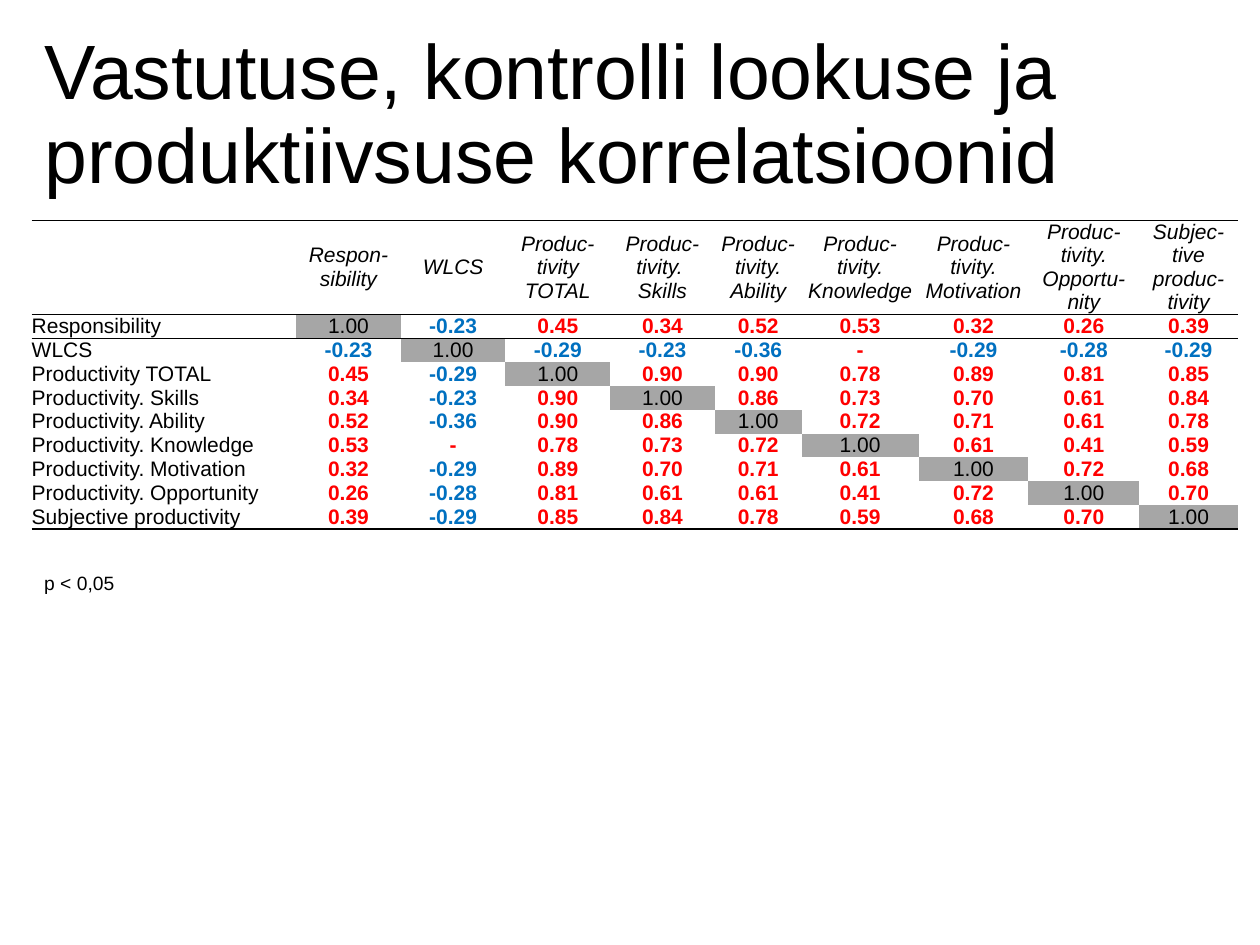
from lxml import etree
from pptx import Presentation
from pptx.dml.color import RGBColor
from pptx.enum.text import MSO_ANCHOR, MSO_AUTO_SIZE, PP_ALIGN
from pptx.oxml.ns import qn
from pptx.util import Cm, Pt

BLACK = RGBColor(0x00, 0x00, 0x00)
RED = RGBColor(0xFF, 0x00, 0x00)
BLUE = RGBColor(0x00, 0x70, 0xC0)
GREY = RGBColor(0xA6, 0xA6, 0xA6)
FONT = "Arial"
NO_STYLE = "{2D5ABB26-0587-4C30-8999-92F81FD0307C}"

MARGIN, WIDTH = 0.64, 24.3
COLUMN_WIDTHS = [5.33, 2.11, 2.11, 2.11, 2.11, 1.75, 2.36, 2.21, 2.24, 1.98]
HEADER_HEIGHT, ROW_HEIGHT = 1.9, 0.48

HEADERS = [
    "", "Respon-sibility", "WLCS", "Produc-tivity TOTAL",
    "Produc-tivity. \vSkills", "Produc-tivity. Ability",
    "Produc-tivity. Knowledge", "Produc-tivity. Motivation",
    "Produc-tivity. Opportu-nity", "Subjec-tive produc-tivity",
]
VARIABLES = [
    "Responsibility", "WLCS", "Productivity TOTAL", "Productivity. Skills",
    "Productivity. Ability", "Productivity. Knowledge",
    "Productivity. Motivation", "Productivity. Opportunity",
    "Subjective productivity",
]
LOWER_TRIANGLE = [
    ["1.00"],
    ["-0.23", "1.00"],
    ["0.45", "-0.29", "1.00"],
    ["0.34", "-0.23", "0.90", "1.00"],
    ["0.52", "-0.36", "0.90", "0.86", "1.00"],
    ["0.53", "-", "0.78", "0.73", "0.72", "1.00"],
    ["0.32", "-0.29", "0.89", "0.70", "0.71", "0.61", "1.00"],
    ["0.26", "-0.28", "0.81", "0.61", "0.61", "0.41", "0.72", "1.00"],
    ["0.39", "-0.29", "0.85", "0.84", "0.78", "0.59", "0.68", "0.70", "1.00"],
]


def format_paragraph(p, size, color=BLACK, bold=False, italic=False, align=PP_ALIGN.LEFT):
    p.alignment = align
    p.font.name = FONT
    p.font.size = Pt(size)
    p.font.color.rgb = color
    p.font.bold = bold
    p.font.italic = italic


def add_border(cell, side):
    tcPr = cell._tc.get_or_add_tcPr()
    ln = etree.Element(qn("a:" + side), w=str(Pt(1)))
    fill = etree.SubElement(ln, qn("a:solidFill"))
    etree.SubElement(fill, qn("a:srgbClr"), val=str(BLACK))
    tcPr.insert(0, ln)


def fill_cell(cell, text, fill=None, anchor=MSO_ANCHOR.MIDDLE, **style):
    cell.margin_left = cell.margin_right = cell.margin_top = cell.margin_bottom = 0
    cell.vertical_anchor = anchor
    if fill is None:
        cell.fill.background()
    else:
        cell.fill.solid()
        cell.fill.fore_color.rgb = fill
    cell.text = text
    format_paragraph(cell.text_frame.paragraphs[0], 12, **style)


def add_title(slide, left, top, width, height):
    title = slide.shapes.title
    title.left, title.top, title.width, title.height = Cm(left), Cm(top), Cm(width), Cm(height)
    tf = title.text_frame
    tf.text = "Vastutuse, kontrolli lookuse ja produktiivsuse korrelatsioonid"
    tf.auto_size = MSO_AUTO_SIZE.NONE
    tf.vertical_anchor = MSO_ANCHOR.MIDDLE
    p = tf.paragraphs[0]
    p.line_spacing = 0.9
    format_paragraph(p, 44)


def add_correlation_table(slide, left, top, width):
    count = len(VARIABLES)
    height = HEADER_HEIGHT + count * ROW_HEIGHT
    frame = slide.shapes.add_table(count + 1, count + 1, Cm(left), Cm(top), Cm(width), Cm(height))
    table = frame.table
    table.first_row = table.horz_banding = False
    table._tbl.tblPr.find(qn("a:tableStyleId")).text = NO_STYLE
    for column, column_width in zip(table.columns, COLUMN_WIDTHS):
        column.width = Cm(column_width)
    for i, row in enumerate(table.rows):
        row.height = Cm(ROW_HEIGHT if i else HEADER_HEIGHT)

    for j, header in enumerate(HEADERS):
        fill_cell(table.cell(0, j), header, italic=True, align=PP_ALIGN.CENTER)
    for i, variable in enumerate(VARIABLES):
        fill_cell(table.cell(i + 1, 0), variable, anchor=MSO_ANCHOR.TOP)
        for j in range(count):
            value = LOWER_TRIANGLE[max(i, j)][min(i, j)]
            diagonal = i == j
            negative = value.startswith("-") and value != "-"
            color = BLACK if diagonal else BLUE if negative else RED
            fill_cell(table.cell(i + 1, j + 1), value, fill=GREY if diagonal else None,
                      color=color, bold=not diagonal, align=PP_ALIGN.CENTER)

    for j in range(count + 1):
        add_border(table.cell(0, j), "lnB")
        add_border(table.cell(0, j), "lnT")
        add_border(table.cell(1, j), "lnT")
        add_border(table.cell(count, j), "lnB")


def add_note(slide, left, top, width, height):
    box = slide.shapes.add_textbox(Cm(left), Cm(top), Cm(width), Cm(height))
    tf = box.text_frame
    tf.text = "p < 0,05"
    tf.word_wrap = False
    tf.auto_size = MSO_AUTO_SIZE.SHAPE_TO_FIT_TEXT
    format_paragraph(tf.paragraphs[0], 11)


def main():
    prs = Presentation()
    prs.slide_width, prs.slide_height = Cm(25.4), Cm(19.05)
    slide = prs.slides.add_slide(prs.slide_layouts[5])
    add_title(slide, MARGIN, 0.51, WIDTH, 3.68)
    add_correlation_table(slide, MARGIN, 4.44, WIDTH)
    add_note(slide, MARGIN, 11.4, 1.93, 0.74)
    prs.save("out.pptx")


if __name__ == "__main__":
    main()
